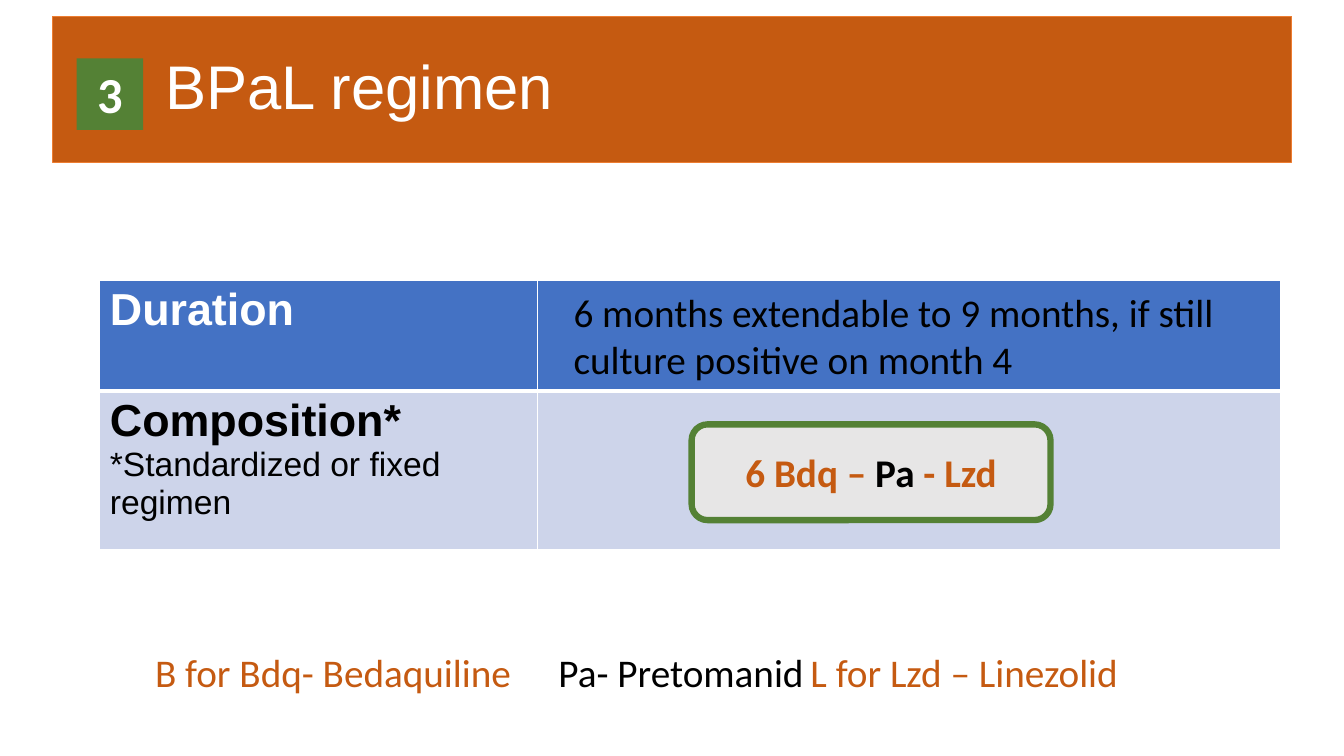
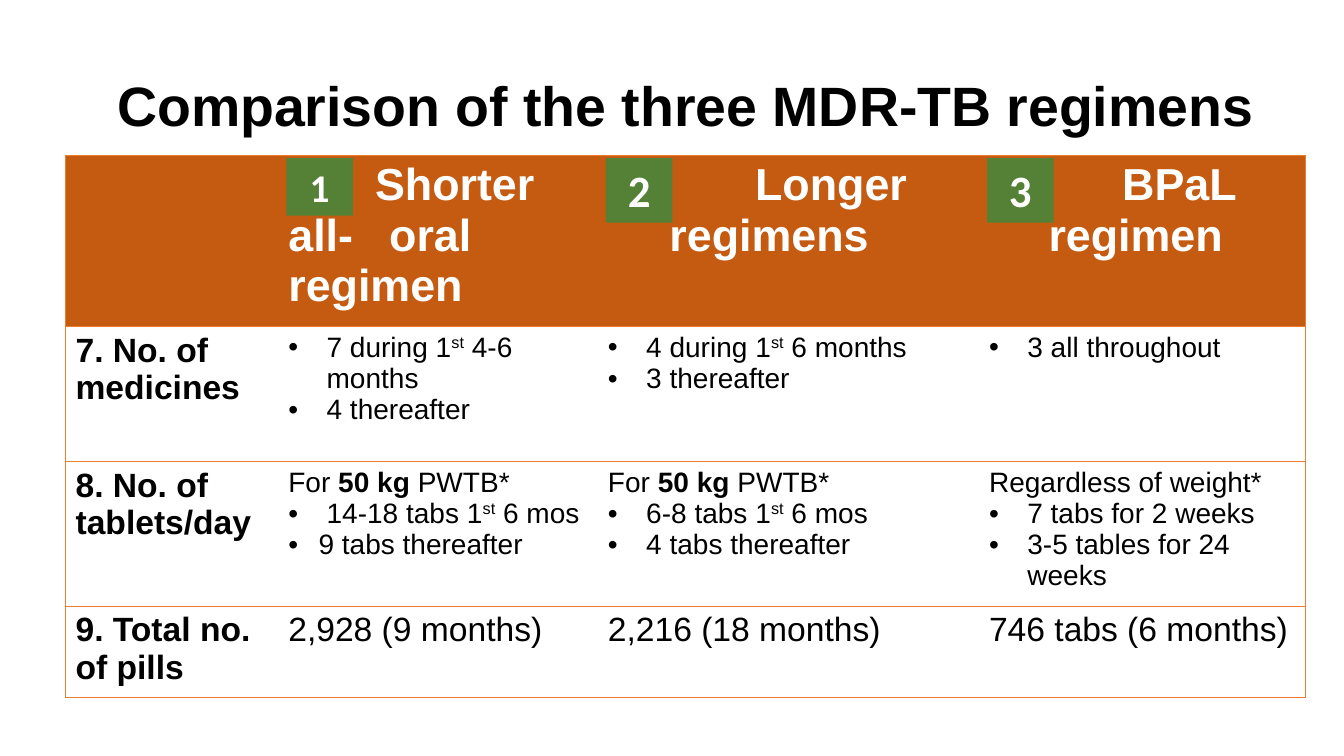
from itertools import accumulate

from lxml.etree import SubElement
from pptx import Presentation
from pptx.dml.color import RGBColor
from pptx.enum.shapes import MSO_SHAPE
from pptx.enum.text import MSO_ANCHOR, PP_ALIGN
from pptx.oxml.ns import qn
from pptx.util import Inches, Pt

ORANGE, EDGE, GREEN = "C55A11", "ED7D31", "548135"
BLUE, PALE, GREY = "4472C4", "CDD4EA", "E7E6E6"
WHITE, BLACK = "FFFFFF", "000000"
PLAIN_TABLE = "{2D5ABB26-0587-4C30-8999-92F81FD0307C}"
SIDES = ("L", "R", "T", "B")

HEADING = dict(name="Arial", size=32, bold=True, color=WHITE)
ROW_LABEL = dict(name="Arial", size=24, bold=True, color=BLACK)
DETAIL = dict(name="Arial", size=20, bold=False, color=BLACK)
TOTAL = DETAIL | dict(size=24)
NOTE = dict(name="Calibri", size=28, bold=False, color=BLACK)
NUMBER = dict(name="Calibri", bold=True, color=WHITE)
CENTERED = dict(align=PP_ALIGN.CENTER)
BULLET = dict(margin=0.38, indent=-0.38, bullet=True)


def write(frame, base, paragraphs):
    frame.word_wrap = True
    for index, (runs, layout) in enumerate(paragraphs):
        paragraph = frame.add_paragraph() if index else frame.paragraphs[0]
        paragraph.alignment = layout.get("align", PP_ALIGN.LEFT)
        if "spacing" in layout:
            paragraph.line_spacing = layout["spacing"]
        properties = paragraph._p.get_or_add_pPr()
        properties.set("marL", str(Inches(layout.get("margin", 0))))
        properties.set("indent", str(Inches(layout.get("indent", 0))))
        if layout.get("bullet"):
            SubElement(SubElement(properties, qn("a:buClr")), qn("a:srgbClr"), val=BLACK)
            SubElement(properties, qn("a:buFont"), typeface="Arial")
            SubElement(properties, qn("a:buChar"), char="•")
        if "tabs" in layout:
            stops = SubElement(properties, qn("a:tabLst"))
            for stop in layout["tabs"]:
                SubElement(stops, qn("a:tab"), pos=str(Inches(stop)), algn="l")
        for text, changes in runs:
            run = paragraph.add_run()
            run.text = text
            values = base | changes
            run.font.color.rgb = RGBColor.from_string(values.pop("color"))
            if values.pop("raised", False):
                run._r.get_or_add_rPr().set("baseline", "30000")
            values["size"] = Pt(values["size"])
            for key, value in values.items():
                setattr(run.font, key, value)


def draw_borders(cell, borders):
    properties = cell._tc.get_or_add_tcPr()
    for side in SIDES:
        if side in borders:
            color, points = borders[side]
            line = SubElement(properties, qn(f"a:ln{side}"), w=str(Pt(points)))
            SubElement(SubElement(line, qn("a:solidFill")), qn("a:srgbClr"), val=color)


presentation = Presentation()
presentation.slide_width = Inches(13.33)
presentation.slide_height = Inches(7.5)
regimen, comparison = (
    presentation.slides.add_slide(presentation.slide_layouts[6]) for _ in range(2)
)

BOLD, RAISED = dict(bold=True), dict(raised=True)
weight_line = ([("For ", {}), ("50 kg ", BOLD), ("PWTB*", {})], {})

composition_rows = [
    [(HEADING, [([("Duration", {})], {})]), None],
    [
        (HEADING | dict(color=BLACK), [
            ([("Composition*", {})], {}),
            ([("*Standardized or fixed regimen", dict(size=24, bold=False))], {}),
        ]),
        None,
    ],
]

comparison_rows = [
    [
        None,
        (HEADING, [([("Shorter all-\toral regimen", {})], dict(indent=0.86, tabs=[1.13]))]),
        (HEADING, [([("Longer regimens", {})], dict(margin=0.61, indent=0.85))]),
        (HEADING, [([("BPaL regimen", {})], dict(margin=0.59, indent=0.73))]),
    ],
    [
        (ROW_LABEL, [([("7. No. of medicines", {})], {})]),
        (DETAIL, [
            ([("7 during 1", {}), ("st", RAISED), (" 4-6 months", {})], BULLET),
            ([("4 thereafter", {})], BULLET),
        ]),
        (DETAIL, [
            ([("4 during 1", {}), ("st", RAISED), (" 6 months", {})], BULLET),
            ([("3 thereafter", {})], BULLET),
        ]),
        (DETAIL, [([("3 all throughout", {})], BULLET)]),
    ],
    [
        (ROW_LABEL, [([("8. No. of tablets/day", {})], {})]),
        (DETAIL, [
            weight_line,
            ([("14-18 tabs 1", {}), ("st", RAISED), (" 6 mos", {})], BULLET),
            ([("9 tabs thereafter", {})], BULLET | dict(margin=0.3, indent=-0.3)),
        ]),
        (DETAIL, [
            weight_line,
            ([("6-8 tabs 1", {}), ("st", RAISED), (" 6 mos", {})], BULLET),
            ([("4 tabs thereafter", {})], BULLET),
        ]),
        (DETAIL, [
            ([("Regardless of weight*", {})], {}),
            ([("7 tabs for 2 weeks", {})], BULLET),
            ([("3-5 tables for 24 weeks", {})], BULLET),
        ]),
    ],
    [(ROW_LABEL, [([("9. Total no. of pills", {})], {})])]
    + [
        (TOTAL, [([(pills, {})], {})])
        for pills in ("2,928 (9 months)", "2,216 (18 months)", "746 tabs (6 months)")
    ],
]

white_frame = {side: (WHITE, 1) for side in SIDES}
orange_rule = (EDGE, 0.75)
top_and_bottom = dict(T=orange_rule, B=orange_rule)
comparison_widths = [2.11, 3.17, 3.78, 3.24]
tables = [
    (regimen, 0.99, 2.78, [4.34, 7.37], [1.1, 1.57], composition_rows, [BLUE, PALE],
     [white_frame | dict(B=(WHITE, 3)), white_frame | dict(T=(WHITE, 3))], {}),
    (comparison, 0.65, 1.54, comparison_widths, [1.6, 1.34, 1.34, 0.85], comparison_rows,
     [ORANGE, None, None, None],
     [top_and_bottom, dict(T=orange_rule), dict(B=orange_rule), top_and_bottom],
     dict(L=orange_rule, R=orange_rule)),
]
for slide, left, top, widths, heights, rows, fills, row_borders, outer in tables:
    grid = slide.shapes.add_table(
        len(heights), len(widths), Inches(left), Inches(top),
        Inches(sum(widths)), Inches(sum(heights)),
    ).table
    grid.first_row = grid.horz_banding = False
    grid._tbl.tblPr.find(qn("a:tableStyleId")).text = PLAIN_TABLE
    for column, width in zip(grid.columns, widths):
        column.width = Inches(width)
    for r, row in enumerate(rows):
        grid.rows[r].height = Inches(heights[r])
        for c, content in enumerate(row):
            cell = grid.cell(r, c)
            borders = dict(row_borders[r])
            for side, edge_column in (("L", 0), ("R", len(widths) - 1)):
                if side in outer and c == edge_column:
                    borders[side] = outer[side]
            draw_borders(cell, borders)
            if fills[r]:
                cell.fill.solid()
                cell.fill.fore_color.rgb = RGBColor.from_string(fills[r])
            else:
                cell.fill.background()
            if content:
                write(cell.text_frame, *content)

ACCENT = dict(color=ORANGE)
TOP, MIDDLE = MSO_ANCHOR.TOP, MSO_ANCHOR.MIDDLE
panels = [
    (regimen, MSO_SHAPE.ROUNDED_RECTANGLE, (6.86, 4.21, 3.56, 0.95), GREY, (GREEN, 4.5),
     MIDDLE, NOTE | BOLD,
     [([("6 Bdq – ", ACCENT), ("Pa", {}), (" - Lzd", ACCENT)], CENTERED)]),
    (regimen, MSO_SHAPE.RECTANGLE, (0.52, 0.16, 12.29, 1.45), ORANGE, (EDGE, 0.75),
     MIDDLE, dict(name="Arial", size=44, bold=False, color=WHITE),
     [([("BPaL regimen", {})], dict(margin=1.02, spacing=0.9))]),
]
badges = [(regimen, "3", 0.76, 0.58, 0.71, 36)]
column_starts = accumulate(comparison_widths[:-1], initial=0.65)
for number, start in enumerate(column_starts):
    if number:
        height, size = (0.57, 28) if number == 1 else (0.64, 32)
        badges.append((comparison, str(number), start + 0.08, 1.57, height, size))
for slide, number, left, top, height, size in badges:
    panels.append(
        (slide, MSO_SHAPE.RECTANGLE, (left, top, 0.66, height), GREEN, None, TOP,
         NUMBER | dict(size=size), [([(number, {})], CENTERED)])
    )
for slide, outline, place, fill, line, anchor, base, paragraphs in panels:
    panel = slide.shapes.add_shape(outline, *map(Inches, place))
    panel.shadow.inherit = False
    panel.fill.solid()
    panel.fill.fore_color.rgb = RGBColor.from_string(fill)
    if line:
        panel.line.color.rgb = RGBColor.from_string(line[0])
        panel.line.width = Pt(line[1])
    else:
        panel.line.fill.background()
    panel.text_frame.vertical_anchor = anchor
    write(panel.text_frame, base, paragraphs)

captions = [
    (regimen, (5.59, 2.81, 6.82, 1.04), TOP, NOTE,
     [([("6 months extendable to 9 months, if still culture positive on month 4", {})], {})]),
    (regimen, (1.44, 6.38, 11.07, 0.57), TOP, NOTE,
     [([("B for Bdq- Bedaquiline\t", ACCENT), ("Pa- Pretomanid\t", {}),
        ("L for Lzd – Linezolid", ACCENT)], dict(tabs=[4.15, 7.28]))]),
    (comparison, (1.05, 0.56, 11.5, 1.03), MIDDLE, HEADING | dict(size=39.6, color=BLACK),
     [([("Comparison of the three MDR-TB regimens", {})], CENTERED | dict(spacing=0.9))]),
]
for slide, place, anchor, base, paragraphs in captions:
    caption = slide.shapes.add_textbox(*map(Inches, place))
    caption.text_frame.vertical_anchor = anchor
    write(caption.text_frame, base, paragraphs)

presentation.save("out.pptx")
